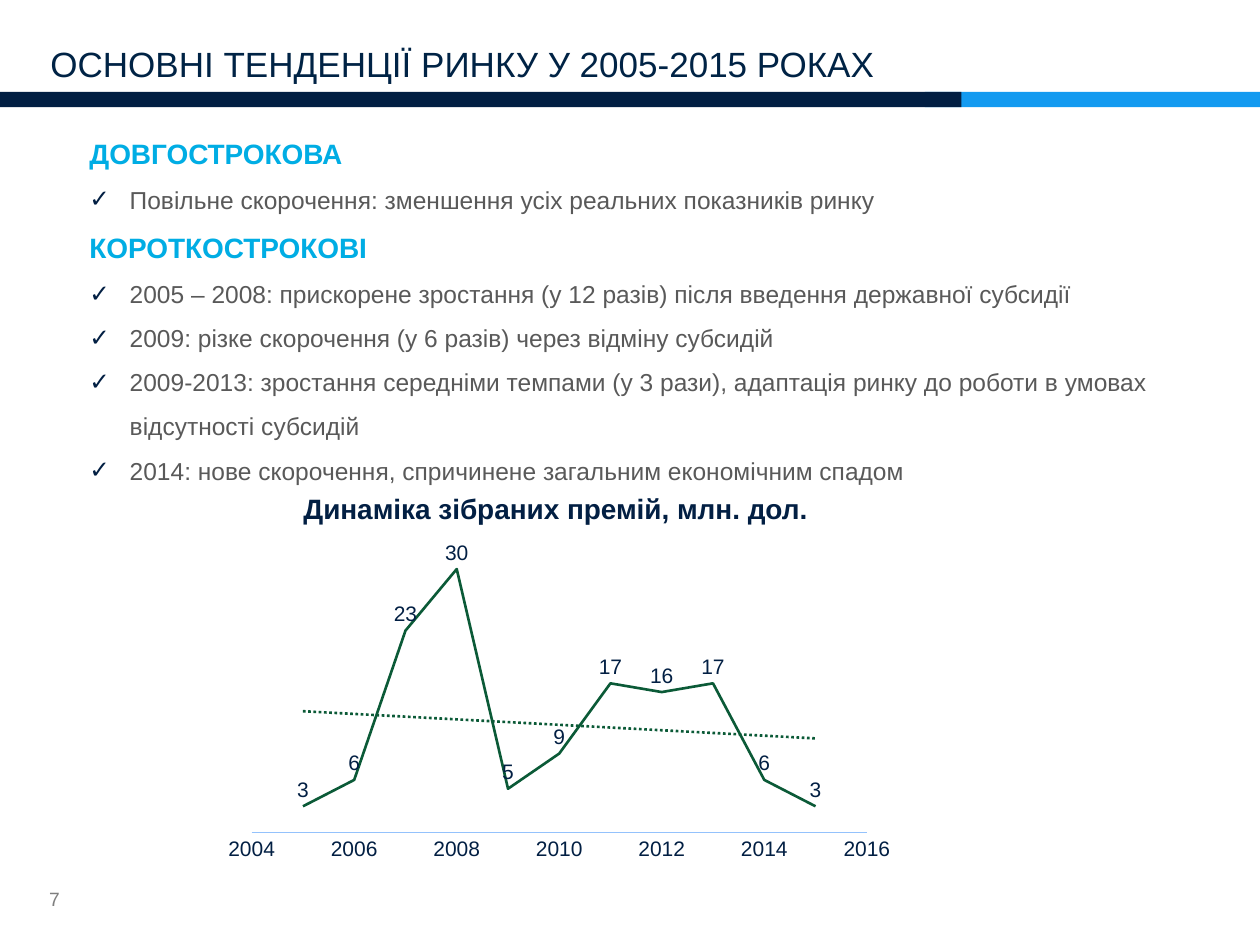
from lxml import etree
from pptx import Presentation
from pptx.chart.data import XyChartData
from pptx.chart.datalabel import DataLabels
from pptx.dml.color import RGBColor
from pptx.enum import chart as ch, shapes, text
from pptx.oxml import parse_xml
from pptx.oxml.ns import nsdecls, qn
from pptx.util import Inches, Pt

NAVY = RGBColor(0x02, 0x1F, 0x43)
TITLE_NAVY = RGBColor(0x00, 0x23, 0x45)
BLUE = RGBColor(0x13, 0x9A, 0xF0)
CYAN = RGBColor(0x00, 0xAD, 0xE4)
GRAY = RGBColor(0x59, 0x59, 0x59)
PAGE_GRAY = RGBColor(0x7F, 0x7F, 0x7F)
GREEN = RGBColor(0x0B, 0x5A, 0x37)
AXIS_BLUE = RGBColor(0x94, 0xC2, 0xFC)
WHITE = RGBColor(0xFF, 0xFF, 0xFF)
FONT = "Arial"

TITLE = "ОСНОВНІ ТЕНДЕНЦІЇ РИНКУ У 2005-2015 РОКАХ"
TRENDS = [
    ("ДОВГОСТРОКОВА", [
        "Повільне скорочення: зменшення усіх реальних показників ринку",
    ]),
    ("КОРОТКОСТРОКОВІ", [
        "2005 – 2008: прискорене зростання (у 12 разів) після введення державної субсидії",
        "2009: різке скорочення (у 6 разів) через відміну субсидій",
        "2009-2013: зростання середніми темпами (у 3 рази), адаптація ринку до роботи "
        "в умовах відсутності субсидій",
        "2014: нове скорочення, спричинене загальним економічним спадом",
    ]),
]
CHART_TITLE = "Динаміка зібраних премій, млн. дол."
FIRST_YEAR = 2005
PREMIUMS = [3, 6, 23, 30, 5, 9, 17, 16, 17, 6, 3]
BARS = [(7.34, 2.66, BLUE), (0, 7.63, NAVY)]
PLOT = {"x": 0.058, "y": 0.051, "w": 0.891, "h": 0.842}

prs = Presentation()
prs.slide_width, prs.slide_height = Inches(10), Inches(7.5)
slide = prs.slides.add_slide(prs.slide_layouts[6])


def add_frame(left, top, width, height, anchor=text.MSO_ANCHOR.TOP, inset=0):
    box = slide.shapes.add_textbox(*map(Inches, (left, top, width, height)))
    frame = box.text_frame
    frame.word_wrap = True
    frame.vertical_anchor = anchor
    if inset == 0:
        frame.margin_left = frame.margin_right = 0
        frame.margin_top = frame.margin_bottom = 0
    return frame


def write(frame, words, size, color, bold=False, spacing=None, indent=(0, 0), bullet=None):
    paragraph = frame.paragraphs[0]
    if paragraph.runs:
        paragraph = frame.add_paragraph()
    props = paragraph._p.get_or_add_pPr()
    props.set("marL", str(Inches(indent[0])))
    props.set("indent", str(Inches(indent[1])))
    if spacing:
        paragraph.line_spacing = spacing
    if bullet:
        bullet_color = etree.SubElement(props, qn("a:buClr"))
        etree.SubElement(bullet_color, qn("a:srgbClr")).set("val", str(NAVY))
        etree.SubElement(props, qn("a:buFont")).set("typeface", FONT)
        etree.SubElement(props, qn("a:buChar")).set("char", bullet)
    run = paragraph.add_run()
    run.text = words
    run.font.name, run.font.size, run.font.bold = FONT, Pt(size), bold
    run.font.color.rgb = color


for left, width, color in BARS:
    bar = slide.shapes.add_shape(
        shapes.MSO_SHAPE.RECTANGLE, Inches(left), Inches(0.73), Inches(width), Inches(0.12))
    bar.shadow.inherit = False
    bar.fill.solid()
    bar.fill.fore_color.rgb = color
    bar.line.fill.background()

write(add_frame(0.39, 6.94, 0.6, 0.39, text.MSO_ANCHOR.MIDDLE), "7", 11, PAGE_GRAY)

body = add_frame(0.4, 0.95, 9.4, 6.14)
for heading, points in TRENDS:
    write(body, heading, 16, CYAN, bold=True, spacing=1.5, indent=(0.31, 0))
    for point in points:
        write(body, point, 14, GRAY, spacing=1.5, indent=(0.63, -0.32), bullet="✓")

write(add_frame(0.4, 0.31, 9.4, 0.36, text.MSO_ANCHOR.BOTTOM), TITLE, 20, TITLE_NAVY)

data = XyChartData()
premiums = data.add_series("Series 1")
for year, premium in enumerate(PREMIUMS, FIRST_YEAR):
    premiums.add_data_point(year, premium)
chart = slide.shapes.add_chart(
    ch.XL_CHART_TYPE.XY_SCATTER_LINES_NO_MARKERS,
    Inches(1.68), Inches(4.02), Inches(5.48), Inches(2.9), data).chart
chart.has_legend = chart.has_title = False
chart.font.name, chart.font.size = FONT, Pt(12)
chart.font.color.rgb = NAVY

years = chart.category_axis
years.minimum_scale, years.maximum_scale, years.major_unit = 2004, 2016, 2
years.has_major_gridlines = False
years.major_tick_mark = years.minor_tick_mark = ch.XL_TICK_MARK.NONE
years.tick_labels.number_format = "0"
years.tick_labels.number_format_is_linked = False
years.format.line.color.rgb = AXIS_BLUE
years.format.line.width = Pt(0.75)
amounts = chart.value_axis
amounts.minimum_scale, amounts.maximum_scale = 0, 35
amounts.has_major_gridlines = False
amounts.visible = False

plot = chart.plots[0]
plot.vary_by_categories = False
series = plot.series[0]
series_xml = series._element
series_xml.get_or_add_smooth().val = False
series.marker.style = ch.XL_MARKER_STYLE.NONE
series.format.line.color.rgb = GREEN
series.format.line.width = Pt(1.5)
labels = DataLabels(series_xml.get_or_add_dLbls())
labels.show_value = True
labels.position = ch.XL_LABEL_POSITION.ABOVE
labels.number_format, labels.number_format_is_linked = "0", False

series_xml.find(qn("c:xVal")).addprevious(parse_xml(
    f'<c:trendline {nsdecls("c", "a")}><c:spPr><a:ln w="{Pt(1.5)}"><a:solidFill>'
    f'<a:srgbClr val="{GREEN}"/></a:solidFill><a:prstDash val="sysDot"/></a:ln></c:spPr>'
    '<c:trendlineType val="linear"/><c:dispRSqr val="0"/><c:dispEq val="0"/></c:trendline>'))

plot_area = chart._chartSpace.chart.plotArea
for layout in plot_area.findall(qn("c:layout")):
    plot_area.remove(layout)
edges = "".join(f'<c:{key} val="{share}"/>' for key, share in PLOT.items())
plot_area.insert(0, parse_xml(
    f'<c:layout {nsdecls("c")}><c:manualLayout><c:layoutTarget val="inner"/>'
    f'<c:xMode val="edge"/><c:yMode val="edge"/>{edges}</c:manualLayout></c:layout>'))
chart._chartSpace.chart.addnext(parse_xml(
    f'<c:spPr {nsdecls("c", "a")}><a:solidFill><a:srgbClr val="{WHITE}"/></a:solidFill>'
    '<a:ln><a:noFill/></a:ln></c:spPr>'))

write(add_frame(2.31, 3.85, 4.76, 0.37, inset=None), CHART_TITLE, 16, NAVY, bold=True)

prs.save("out.pptx")
